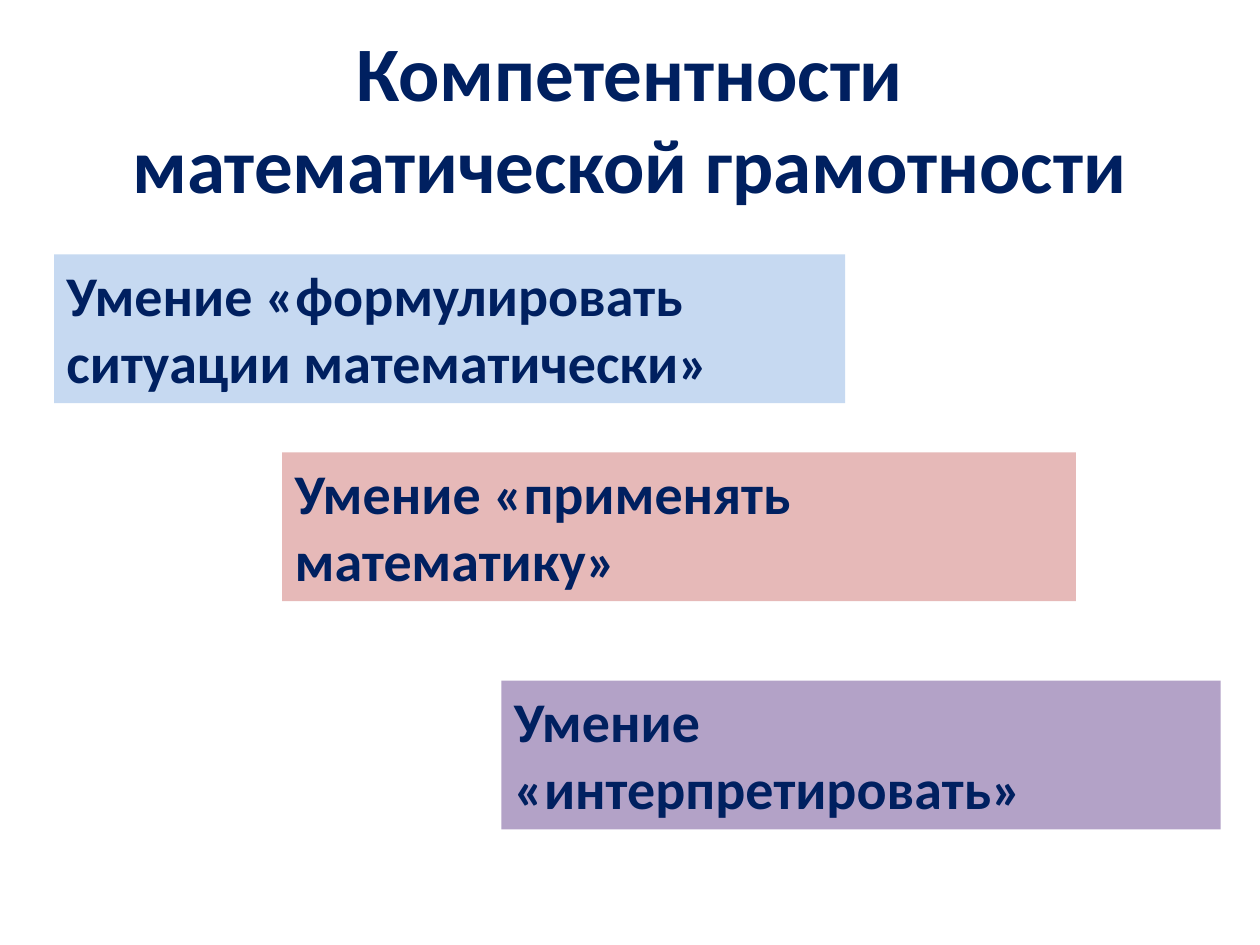
from dataclasses import dataclass
from pptx import Presentation
from pptx.dml.color import RGBColor
from pptx.enum.text import MSO_ANCHOR, PP_ALIGN
from pptx.util import Cm, Pt


@dataclass(frozen=True)
class Theme:
    font: str = "Calibri"
    ink: str = "002060"
    blue: str = "C6D9F1"
    rose: str = "E6B9B8"
    plum: str = "B3A2C7"
    head: int = 44
    body: int = 32


theme = Theme()
title = ("Компетентности математической грамотности", (1.27, 0.76, 22.86, 3.18))
high = 3
skills = [
    ("Умение «формулировать ситуации математически»", theme.blue, 1.09, 5.13, 15.95),
    ("Умение «применять математику»", theme.rose, 5.69, 9.12, 16),
    ("Умение «интерпретировать»", theme.plum, 10.11, 13.72, 14.5),
]


def add_text(slide, text, area, size, align, anchor):
    box = slide.shapes.add_textbox(*map(Cm, area))
    frame = box.text_frame
    frame.word_wrap = True
    frame.vertical_anchor = anchor
    para = frame.paragraphs[0]
    para.alignment = align
    run = para.add_run()
    run.text = text
    font = run.font
    font.name = theme.font
    font.size = Pt(size)
    font.bold = True
    font.color.rgb = RGBColor.from_string(theme.ink)
    return box


def main():
    deck = Presentation()
    deck.slide_width, deck.slide_height = Cm(25.4), Cm(19.05)
    slide = deck.slides.add_slide(deck.slide_layouts[6])
    for text, fill, left, top, wide in skills:
        box = add_text(slide, text, (left, top, wide, high), theme.body,
                       PP_ALIGN.LEFT, MSO_ANCHOR.TOP)
        box.fill.solid()
        box.fill.fore_color.rgb = RGBColor.from_string(fill)
    add_text(slide, *title, theme.head, PP_ALIGN.CENTER, MSO_ANCHOR.MIDDLE)
    deck.save("out.pptx")


if __name__ == "__main__":
    main()
